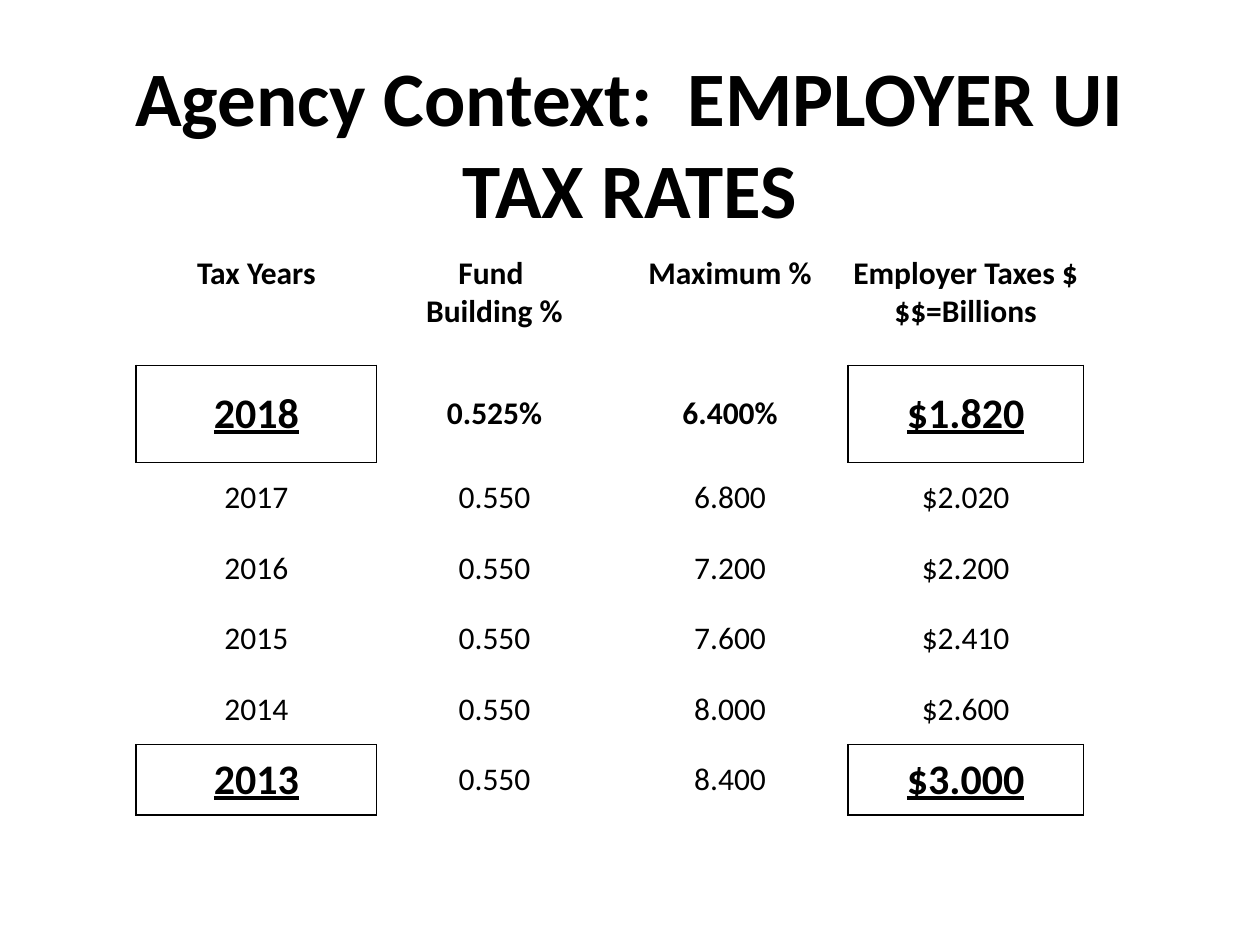
from lxml import etree
from pptx import Presentation
from pptx import util as u
from pptx.dml.color import RGBColor
from pptx.enum import text
from pptx.oxml import ns

BLACK = RGBColor(0x00, 0x00, 0x00)
FONT = "Calibri"
TITLE = "Agency Context:  EMPLOYER UI TAX RATES"
ROWS = [
    ("Tax Years\n", "Fund\u00a0\nBuilding %", "Maximum\u00a0%\n", "Employer Taxes $$$=Billions"),
    ("2018", "0.525%", "6.400%", "$1.820"),
    ("2017", "0.550", "6.800", "$2.020"),
    ("2016", "0.550", "7.200", "$2.200"),
    ("2015", "0.550", "7.600", "$2.410"),
    ("2014", "0.550", "8.000", "$2.600"),
    ("2013", "0.550", "8.400", "$3.000"),
]
COLUMN_WIDTHS = [1.91] + [1.87] * 3
ROW_HEIGHTS = [1.15, 0.77] + [0.56] * 5
BOLD_ROWS = (0, 1)
BOXED = {(row, column) for row in (1, 6) for column in (0, 3)}
SIDES = {"lnL": (0, -1), "lnR": (0, 1), "lnT": (-1, 0), "lnB": (1, 0)}


def write(paragraph, content, size, bold, underline=False):
    """Add centred text, one run per line."""
    paragraph.alignment = text.PP_ALIGN.CENTER
    for index, line in enumerate(content.split("\n")):
        if index:
            paragraph.add_line_break()
        if line:
            run = paragraph.add_run()
            run.text = line
            run.font.name = FONT
            run.font.size = u.Pt(size)
            run.font.bold = bold
            run.font.underline = underline
            run.font.color.rgb = BLACK


def add_title(slide):
    title = slide.shapes.title
    title.left, title.top = u.Inches(0.69), u.Inches(0.4)
    title.width, title.height = u.Inches(8.62), u.Inches(1.45)
    title.text_frame.vertical_anchor = text.MSO_ANCHOR.MIDDLE
    title.text_frame.word_wrap = True
    write(title.text_frame.paragraphs[0], TITLE, 44, True)


def set_borders(cell, row, column):
    """Draw the edges of a boxed cell, and those its neighbours share with it."""
    properties = cell._tc.get_or_add_tcPr()
    for tag, (down, right) in SIDES.items():
        drawn = (row, column) in BOXED or (row + down, column + right) in BOXED
        line = etree.SubElement(properties, ns.qn("a:" + tag), w=str(u.Pt(1)))
        if drawn:
            fill = etree.SubElement(line, ns.qn("a:solidFill"))
            etree.SubElement(fill, ns.qn("a:srgbClr"), val=str(BLACK))
        else:
            etree.SubElement(line, ns.qn("a:noFill"))


def format_cell(cell, row, column):
    boxed = (row, column) in BOXED
    set_borders(cell, row, column)
    cell.fill.background()
    cell.vertical_anchor = text.MSO_ANCHOR.MIDDLE
    cell.margin_left = cell.margin_right = u.Inches(0.04)
    cell.margin_top = cell.margin_bottom = u.Inches(0.02)
    write(cell.text_frame.paragraphs[0], ROWS[row][column],
          24 if boxed else 18, boxed or row in BOLD_ROWS, boxed)


def add_tax_table(slide):
    frame = slide.shapes.add_table(
        len(ROWS), len(COLUMN_WIDTHS), u.Inches(1.08), u.Inches(1.75),
        u.Inches(sum(COLUMN_WIDTHS)), u.Inches(sum(ROW_HEIGHTS)))
    table = frame.table
    table.first_row = table.horz_banding = False
    for column, width in zip(table.columns, COLUMN_WIDTHS):
        column.width = u.Inches(width)
    for row, height in zip(table.rows, ROW_HEIGHTS):
        row.height = u.Inches(height)
    for row in range(len(ROWS)):
        for column in range(len(COLUMN_WIDTHS)):
            format_cell(table.cell(row, column), row, column)


def main():
    presentation = Presentation()
    presentation.slide_width, presentation.slide_height = u.Inches(10), u.Inches(7.5)
    slide = presentation.slides.add_slide(presentation.slide_layouts[5])
    add_title(slide)
    add_tax_table(slide)
    presentation.save("out.pptx")


if __name__ == "__main__":
    main()
